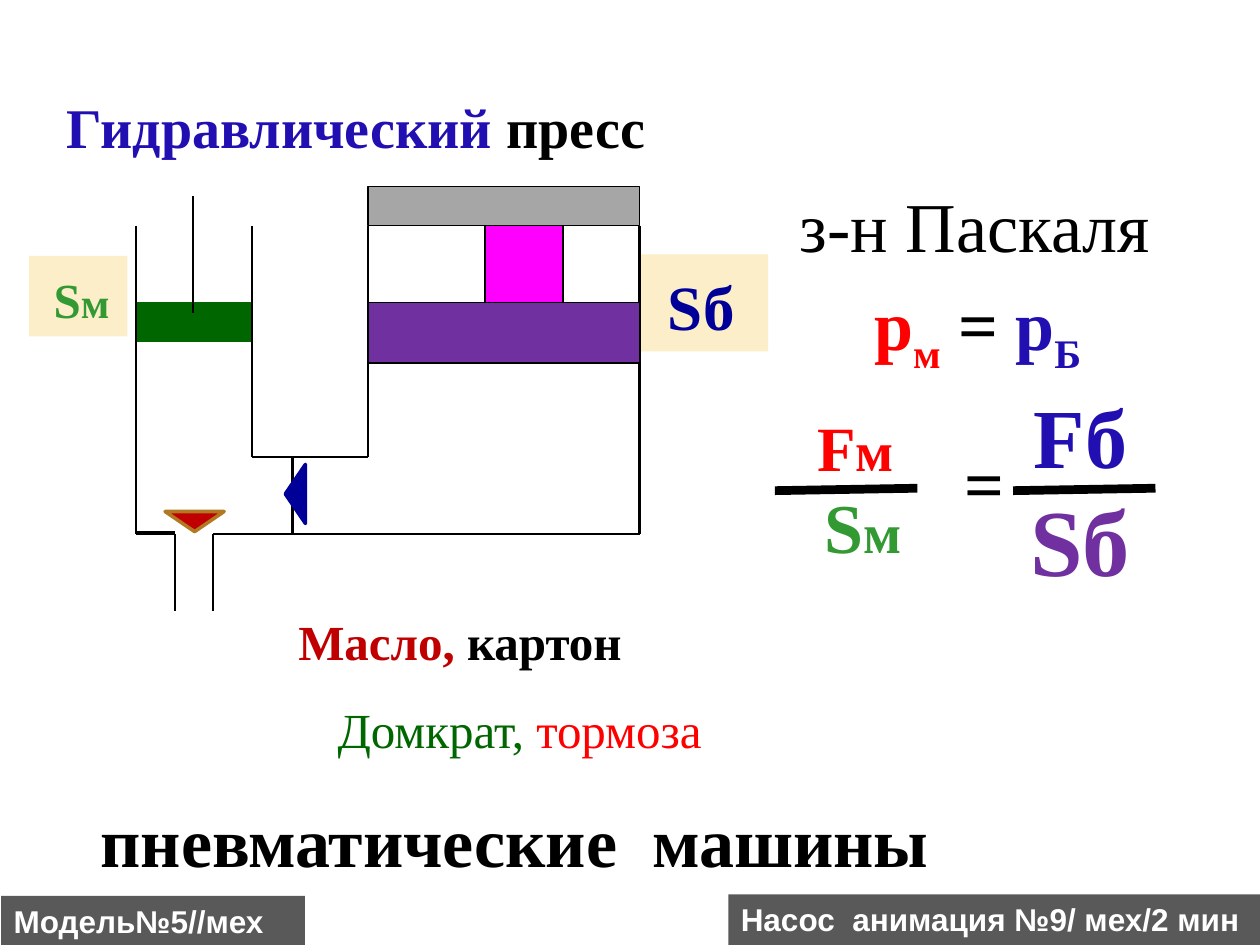
import dataclasses

import pptx
import pptx.dml.color
import pptx.enum.shapes
import pptx.enum.text
import pptx.oxml.ns
import pptx.util
from lxml import etree

Pt = pptx.util.Pt
Shape = pptx.enum.shapes.MSO_SHAPE
Anchor = pptx.enum.text.MSO_ANCHOR


@dataclasses.dataclass(frozen=True)
class Theme:
    serif: str = "Times New Roman"
    sans: str = "Arial"
    black: str = "000000"
    white: str = "FFFFFF"
    red: str = "FF0000"
    dark_red: str = "C00000"
    bronze: str = "B27822"
    blue: str = "220FB1"
    navy: str = "000099"
    green: str = "339933"
    dark_green: str = "006600"
    purple: str = "7030A0"
    magenta: str = "FF00FF"
    cream: str = "FBEEC9"
    gray: str = "A6A6A6"
    dark_gray: str = "595959"
    note: int = 18
    tiny: int = 24
    small: int = 28
    index: int = 32
    medium: int = 36
    large: int = 40
    tall: int = 44
    force: int = 48
    area: int = 54
    huge: int = 60
    thin: float = 0.75
    wall: float = 1.5
    edge: float = 2
    bar: float = 5


class PressSlide:
    def __init__(self, deck, theme):
        self.theme = theme
        self.slide = deck.slides.add_slide(deck.slide_layouts[5])

    def color(self, value):
        return pptx.dml.color.RGBColor.from_string(value)

    def fill_text(self, holder, runs, bold=True, font=None, wrap=True, anchor=Anchor.TOP):
        """Each run is (text, size, colour) with an optional baseline shift."""
        frame = holder.text_frame
        frame.word_wrap = wrap
        frame.auto_size = pptx.enum.text.MSO_AUTO_SIZE.SHAPE_TO_FIT_TEXT
        frame.vertical_anchor = anchor
        paragraph = frame.paragraphs[0]
        paragraph.alignment = pptx.enum.text.PP_ALIGN.LEFT
        for words, size, color, *shift in runs:
            run = paragraph.add_run()
            run.text = words
            run.font.name = font or self.theme.serif
            run.font.size = Pt(size)
            run.font.bold = bold
            run.font.color.rgb = self.color(color)
            if shift:
                run.font._element.set("baseline", str(shift[0] * 1000))

    def title(self, box, runs):
        heading = self.slide.shapes.title
        heading.left, heading.top, heading.width, heading.height = map(Pt, box)
        self.fill_text(heading, runs, wrap=False)

    def text(self, box, runs, **style):
        self.fill_text(self.slide.shapes.add_textbox(*map(Pt, box)), runs, **style)

    def block(self, box, fill, outline=None, width=None, kind=Shape.RECTANGLE, turn=0):
        block = self.slide.shapes.add_shape(kind, *map(Pt, box))
        block.shadow.inherit = False
        block.rotation = turn
        block.fill.solid()
        block.fill.fore_color.rgb = self.color(fill)
        if outline:
            block.line.color.rgb = self.color(outline)
            block.line.width = Pt(width or self.theme.thin)
        else:
            block.line.fill.background()
        return block

    def label(self, box, fill, runs, **style):
        self.fill_text(self.block(box, fill), runs, **style)

    def line(self, x1, y1, x2, y2, width=None):
        line = self.slide.shapes.add_connector(
            pptx.enum.shapes.MSO_CONNECTOR.STRAIGHT, *map(Pt, (x1, y1, x2, y2)))
        line.line.color.rgb = self.color(self.theme.black)
        line.line.width = Pt(width or self.theme.wall)
        etree.SubElement(line._element.spPr, pptx.oxml.ns.qn("a:effectLst"))


def draw_press(page):
    t = page.theme
    left, narrow, wide, right = 77.8, 144, 210.3, 365.6
    rim, neck, floor, drain = 129, 261.2, 305.2, 349.2
    inlet_left, inlet_right, valve = 100, 121.8, 167
    piston = 172.8

    # Load, small piston and its rod
    page.block((277.2, rim, 44.6, piston - rim), t.magenta, t.black)
    page.block((left, piston, narrow - left, 22.3), t.dark_green, t.dark_green)
    page.line(110.3, 112, 110.3, 178.6)

    # Area labels
    page.label((right, 145.4, 73.4, 55.4), t.cream,
               [(" Sб", t.medium, t.navy), (" ", t.large, t.navy)])
    page.label((16.6, 146.2, 56.2, 46), t.cream,
               [(" S", t.small, t.green), ("м", t.tiny, t.green), (" ", t.index, t.black)])

    # Vessel walls
    for x, top, bottom in [(left, rim, floor), (right, rim, floor),
                           (narrow, rim, neck), (wide, rim, neck),
                           (inlet_left, floor, drain), (inlet_right, floor, drain),
                           (valve, neck, 275.8), (valve, 288, floor)]:
        page.line(x, top, x, bottom)
    page.line(inlet_right, floor, right, floor)
    page.line(narrow, neck, wide, neck)
    page.line(left, 304.6, inlet_left, 304.6, 2.25)

    # Top plate, valves and large piston
    page.block((wide, 106.6, right - wide, rim - 106.6), t.gray, t.black)
    for x, y, fill, outline, turn in [(94.3, 292.3, t.dark_red, t.bronze, 180),
                                      (151.9, 276.5, t.navy, t.navy, 270)]:
        page.block((x, y, 33.8, 11.5), fill, outline, t.edge,
                   Shape.ISOSCELES_TRIANGLE, turn)
    page.block((wide, piston, right - wide, 34.6), t.purple, t.black)


def add_formulas(page):
    t = page.theme
    # Pascal's law
    page.text((450, 100.8, 216.7, 55.4), [("з-н Паскаля", t.large, t.black)],
              bold=False, wrap=False)
    page.text((492.5, 157, 138.2, 55.4),
              [("р", t.large, t.red), ("м", t.large, t.red, -25),
               (" = ", t.large, t.black), ("р", t.large, t.blue),
               ("Б", t.large, t.blue, -25)], wrap=False)

    # Small-piston fraction
    page.text((460, 229.7, 69.8, 51), [("F", t.medium, t.red), ("м", t.index, t.red)])
    page.text((454.3, 268.6, 81.4, 60.5),
              [(" S", t.large, t.green), ("м", t.index, t.green), (" ", t.tall, t.black)])

    # Large-piston fraction
    page.text((571.7, 216, 80.6, 65.5),
              [(" ", t.force, t.red), ("Fб", t.force, t.blue)], wrap=False)
    page.text((568, 265.7, 92.9, 80),
              [(" ", t.area, t.green), ("Sб", t.area, t.purple), (" ", t.huge, t.black)])

    # Fraction bars and equals sign
    for x in (442.8, 578.9):
        page.line(x, 280.4, x + 81.4, 279, t.bar)
    page.text((534.2, 247.7, 47.5, 55.4), [(" =", t.large, t.black)], wrap=False)


def add_captions(page):
    t = page.theme
    # Materials and applications
    page.text((163.4, 345.6, 208, 41),
              [("Масло, ", t.small, t.dark_red), ("картон", t.small, t.black)],
              anchor=Anchor.MIDDLE)
    page.text((185.8, 396, 231.8, 41),
              [("Домкрат, ", t.small, t.dark_green), ("тормоза", t.small, t.red)],
              bold=False, wrap=False, anchor=Anchor.MIDDLE)
    page.text((50.4, 452.2, 489.6, 55.4),
              [("пневматические  машины", t.large, t.black)], anchor=Anchor.MIDDLE)

    # Demonstration tags
    for x, y, width, words in [(0.7, 512, 173.5, "Модель№5//мех"),
                               (416.2, 511, 303.8, "Насос  анимация №9/ мех/2 мин")]:
        page.label((x, y, width, 29), t.dark_gray, [(words, t.note, t.white)], font=t.sans)


def main():
    deck = pptx.Presentation()
    deck.slide_width, deck.slide_height = Pt(720), Pt(540)
    theme = Theme()
    page = PressSlide(deck, theme)
    page.title((31, 49, 348.5, 46),
               [("Гидравлический", theme.index, theme.blue),
                (" пресс", theme.index, theme.black)])
    draw_press(page)
    add_formulas(page)
    add_captions(page)
    deck.save("out.pptx")


if __name__ == "__main__":
    main()
